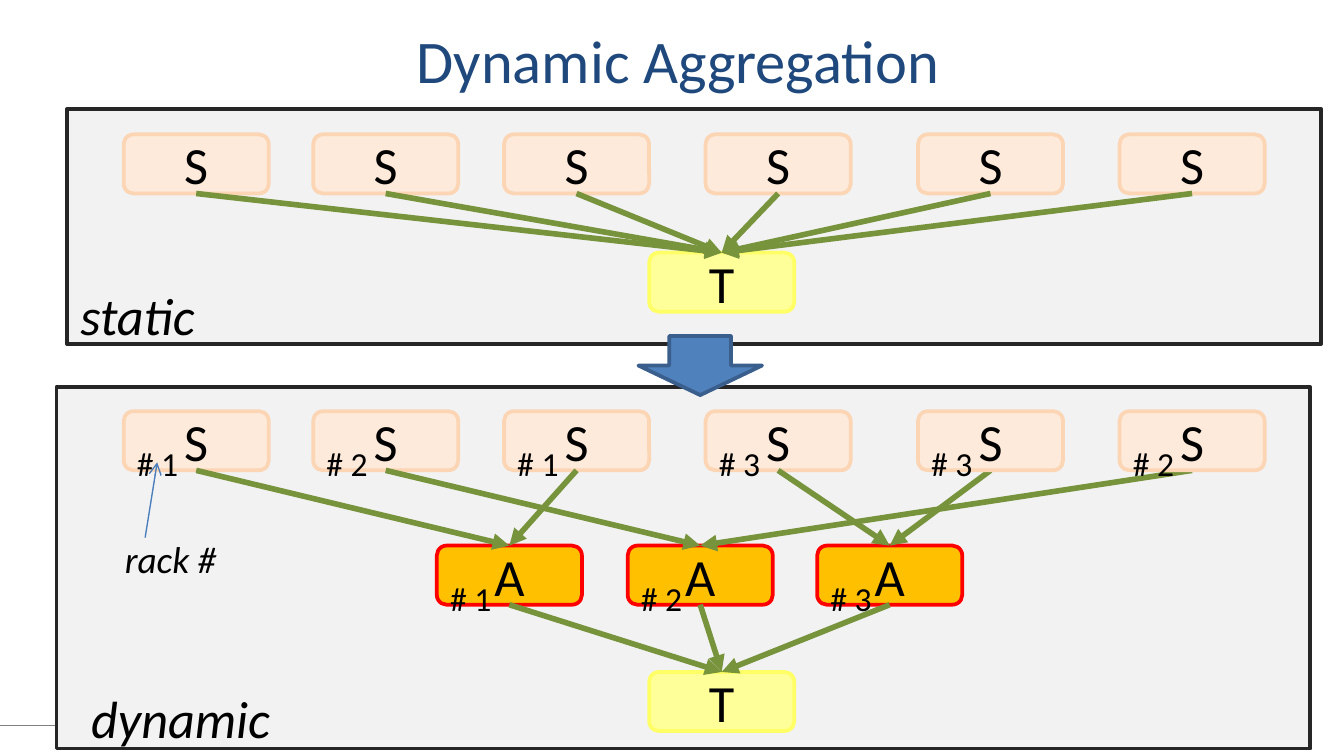
from pptx import Presentation
from pptx.dml.color import RGBColor
from pptx.enum.shapes import MSO_CONNECTOR, MSO_SHAPE as Kind
from pptx.enum.text import MSO_ANCHOR as Anchor, MSO_AUTO_SIZE as Fit, PP_ALIGN as Align
from pptx.oxml.ns import qn
from pptx.util import Inches, Pt
from lxml.etree import SubElement

TITLE = "Dynamic Aggregation"
FONT = "Calibri"
GREEN = "77933C"
STYLES = {  # letter: fill, line
    "S": ("FDEADA", "FCD5B5"),
    "A": ("FFC000", "FF0000"),
    "T": ("FFFF99", "FFFF66"),
}
BOX_W, BOX_H = 1.08, 0.44
COLS = {
    "S": [0.92, 2.33, 3.75, 5.25, 6.83, 8.33],
    "A": [3.25, 4.67, 6.08],
    "T": [4.83],
}
RACKS = [1, 2, 1, 3, 3, 2]  # rack of each S box
PANELS = [(0.42, 2.88, 9.33, 2.69), (0.5, 0.81, 9.33, 1.75)]
NOTES = [  # text, size, place
    ("static", 28, (0.5, 2.06, 1.06, 0.57)),
    ("dynamic", 28, (0.58, 5.06, 1.54, 0.57)),
    ("rack #", 20, (0.83, 3.94, 0.89, 0.44)),
]


def rgb(code):
    return RGBColor.from_string(code)


def inches(place):
    return [Inches(v) for v in place]


def style(para, size, color="000000", italic=None):
    for run in para.runs:
        font = run.font
        font.name, font.size, font.italic = FONT, Pt(size), italic
        font.color.rgb = rgb(color)


def add_form(kind, place, fill, line, text=""):
    form = slide.shapes.add_shape(kind, *inches(place))
    form.shadow.inherit = False
    form.fill.solid()
    form.fill.fore_color.rgb = rgb(fill)
    form.line.color.rgb = rgb(line)
    form.line.width = Pt(2)
    if text:
        frame = form.text_frame
        frame.text = text
        frame.vertical_anchor = Anchor.MIDDLE
        frame.paragraphs[0].alignment = Align.CENTER
        style(frame.paragraphs[0], 28)
    return form


def add_row(letter, top):
    return [add_form(Kind.ROUNDED_RECTANGLE, (left, top, BOX_W, BOX_H),
                     *STYLES[letter], letter) for left in COLS[letter]]


def add_line(start, end, color, width, head=None):
    link = slide.shapes.add_connector(MSO_CONNECTOR.STRAIGHT, *inches(start + end))
    link.line.color.rgb = rgb(color)
    link.line.width = Pt(width)
    if head:
        SubElement(link.line._get_or_add_ln(), qn("a:tailEnd"), type=head)
    SubElement(link._element.spPr, qn("a:effectLst"))
    return link


def join(source, target):
    """Arrow from the bottom of one box to the top of another."""
    link = add_line((0, 0), (1, 1), GREEN, 3, "triangle")
    link.begin_connect(source, 2)
    link.end_connect(target, 0)


def add_text(text, size, place, wrap=False, italic=None):
    frame = slide.shapes.add_textbox(*inches(place)).text_frame
    frame.word_wrap = wrap
    frame.text = text
    style(frame.paragraphs[0], size, italic=italic)


def add_racks(letter, top, racks):
    for left, rack in zip(COLS[letter], racks):
        add_text(f"# {rack}", 18, (left, top, 0.58, 0.4), wrap=True)


deck = Presentation()
deck.slide_width = Inches(10)
deck.slide_height = deck.slide_width * 9 // 16
slide = deck.slides.add_slide(deck.slide_layouts[5])

title = slide.shapes.title
title.left, title.top, title.width, title.height = inches((0.42, 0.13, 9.25, 0.62))
frame = title.text_frame
frame.text = TITLE
frame.auto_size = Fit.NONE
frame.vertical_anchor = Anchor.MIDDLE
frame.paragraphs[0].alignment = Align.CENTER
style(frame.paragraphs[0], 32.4, "1F497D")

add_line((0, 5.4), (7.58, 5.4), "808080", 0.75)
for place in PANELS:
    add_form(Kind.RECTANGLE, place, "F2F2F2", "262626")

# Static: every source goes straight to the target
sources, (target,) = add_row("S", 1), add_row("T", 1.88)
for source in sources:
    join(source, target)

# Dynamic: sources meet in their rack's aggregator first
sources, hubs, (target,) = add_row("S", 3.06), add_row("A", 4.06), add_row("T", 5)
for source, rack in zip(sources, RACKS):
    join(source, hubs[rack - 1])
for source in sources[4:]:  # the last two lie over their arrows
    slide.shapes._spTree.append(source._element)
for hub in hubs:
    join(hub, target)

add_form(Kind.DOWN_ARROW, (4.75, 2.5, 0.92, 0.44), "4F81BD", "3A5F8C")
add_racks("S", 3.25, RACKS)
add_racks("A", 4.25, [1, 2, 3])
for text, size, place in NOTES:
    add_text(text, size, place, italic=True)
add_line((1.08, 4), (1.17, 3.44), "4B7EBC", 0.75, "arrow")

deck.save("out.pptx")
